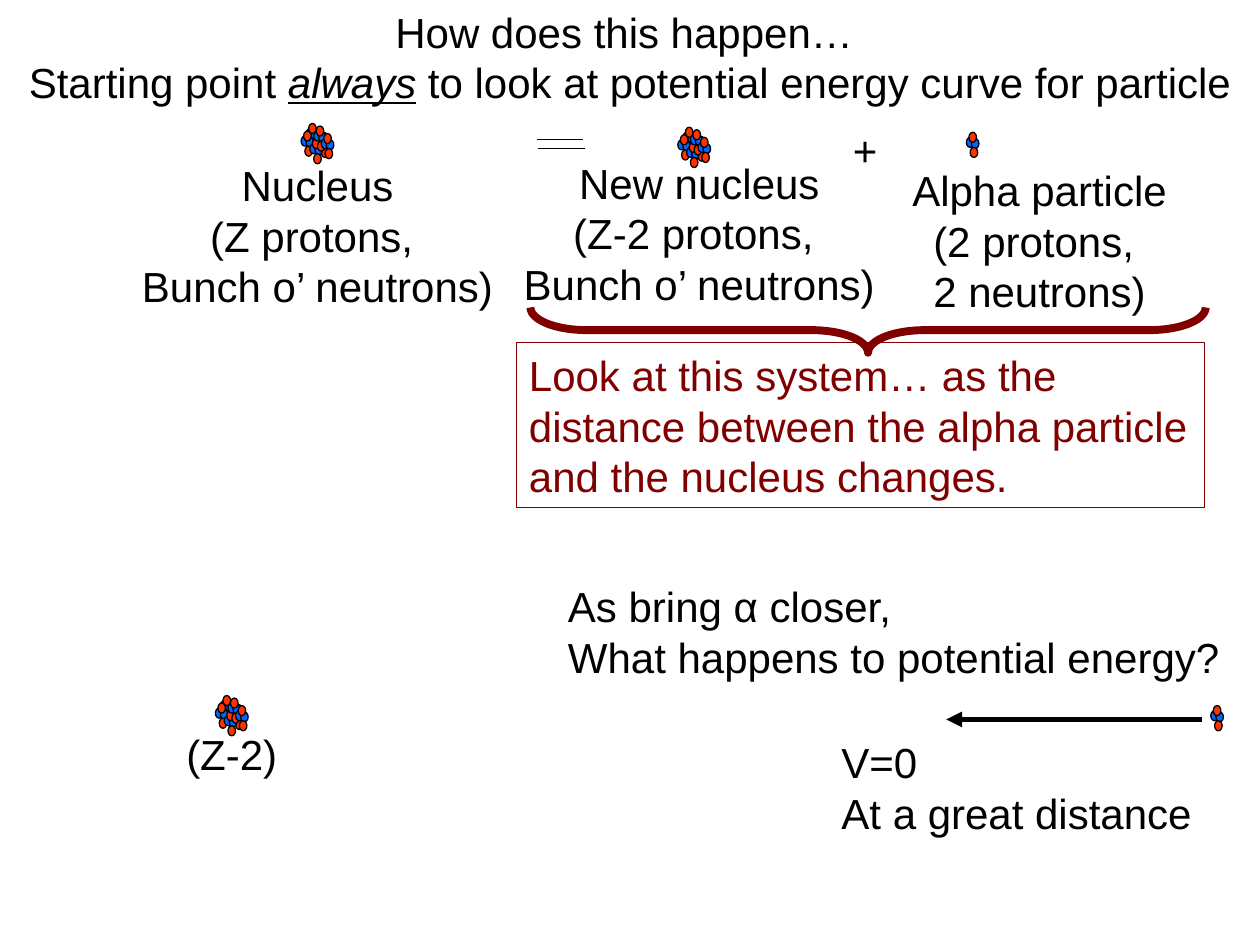
from lxml import etree
from pptx import Presentation
from pptx.dml.color import RGBColor
from pptx.enum.shapes import MSO_CONNECTOR, MSO_SHAPE
from pptx.enum.text import PP_ALIGN
from pptx.oxml.ns import qn
from pptx.util import Pt

PX = 9144
FONT = "Arial"
BLACK, MAROON, NEUTRON_BLUE, PROTON_RED = "000000", "800000", "0066FF", "FF3300"
LEFT, CENTER = PP_ALIGN.LEFT, PP_ALIGN.CENTER
ELLIPSE, RECTANGLE, BRACE = MSO_SHAPE.OVAL, MSO_SHAPE.RECTANGLE, MSO_SHAPE.LEFT_BRACE
STRAIGHT = MSO_CONNECTOR.STRAIGHT

NUCLEON_SIZE = (6, 8)
NUCLEONS = [(0, 4, NEUTRON_BLUE), (4, 5, NEUTRON_BLUE), (2, 0, PROTON_RED), (3, 12, PROTON_RED)]
ALPHAS_IN_NUCLEUS = [(4, 0), (0, 6), (13, 7), (7, 12), (10, 2), (16, 8)]


def emu(*lengths):
    return [round(length * PX) for length in lengths]


def color(hex_code):
    return RGBColor.from_string(hex_code)


def write(frame, lines, hex_code=BLACK, align=LEFT, wrap=True):
    frame.word_wrap = wrap
    frame.text = "\n".join(lines)
    for paragraph in frame.paragraphs:
        paragraph.alignment = align
        for run in paragraph.runs:
            style(run, hex_code)


def style(run, hex_code):
    run.font.name = FONT
    run.font.size = Pt(24)
    run.font.color.rgb = color(hex_code)


def add_label(shapes, box, lines, align=LEFT, wrap=False):
    label = shapes.add_textbox(*emu(*box))
    write(label.text_frame, lines, align=align, wrap=wrap)
    return label.text_frame


def add_outlined(shapes, preset, box, line_color, line_width, fill=None):
    outlined = shapes.add_shape(preset, *emu(*box))
    outlined.shadow.inherit = False
    outlined.line.color.rgb = color(line_color)
    outlined.line.width = Pt(line_width)
    if fill:
        outlined.fill.solid()
        outlined.fill.fore_color.rgb = color(fill)
    else:
        outlined.fill.background()
    return outlined


def add_line(shapes, start, end, width):
    connector = shapes.add_connector(STRAIGHT, *emu(*start, *end))
    connector.line.color.rgb = color(BLACK)
    connector.line.width = Pt(width)
    etree.SubElement(connector.element.spPr, qn("a:effectLst"))
    return connector


def add_alpha(shapes, left, top):
    alpha = shapes.add_group_shape()
    for dx, dy, fill in NUCLEONS:
        box = (left + dx, top + dy, *NUCLEON_SIZE)
        add_outlined(alpha.shapes, ELLIPSE, box, BLACK, 0.75, fill)


def add_nucleus(shapes, left, top):
    nucleus = shapes.add_group_shape()
    for dx, dy in ALPHAS_IN_NUCLEUS:
        add_alpha(nucleus.shapes, left + dx, top + dy)


def add_heading(shapes, box):
    frame = add_label(shapes, box, ["How does this happen… ", "Starting point "], CENTER, wrap=True)
    starting_point = frame.paragraphs[1]
    for words, stressed in [("always", True),
                            (" to look at potential energy curve for particle", False)]:
        run = starting_point.add_run()
        run.text = words
        style(run, BLACK)
        run.font.italic = stressed
        run.font.underline = stressed


def add_decay_equation(shapes, left, top):
    add_label(shapes, (left + 2, top + 32, 300, 130),
              ["Nucleus", "(Z protons, ", "Bunch o’ neutrons)"], CENTER)
    add_nucleus(shapes, left + 139, top + 8)
    for dx, dy in [(326, 21), (327, 28)]:
        add_line(shapes, (left + dx, top + dy), (left + dx + 37, top + dy), 0.75)
    add_label(shapes, (left + 305, top + 30, 300, 130),
              ["New nucleus", "(Z-2 protons, ", "Bunch o’ neutrons)"], CENTER)
    add_nucleus(shapes, left + 438, top + 11)
    add_label(shapes, (left + 567, top + 4, 40, 50), ["+"])
    add_label(shapes, (left + 614, top + 36, 222, 130),
              ["Alpha particle", "(2 protons, ", "2 neutrons)"], CENTER)
    add_alpha(shapes, left + 667, top + 15)


def add_system_note(shapes, left, top):
    span, depth = 536, 36
    turn = (span - depth) / 2
    brace = add_outlined(shapes, BRACE, (left + 11 + turn, top - turn, depth, span), MAROON, 4.5)
    brace.rotation = 270
    brace.adjustments[0] = 1.25
    brace.adjustments[1] = 0.5
    note = add_outlined(shapes, RECTANGLE, (left, top + 28, 546, 131), MAROON, 0.75)
    write(note.text_frame, ["Look at this system… as the distance between the alpha particle "
                            "and the nucleus changes."], MAROON)


def add_approach(shapes, left, top):
    add_nucleus(shapes, left + 41, top + 102)
    add_label(shapes, (left + 8, top + 123, 92, 50), ["(Z-2)"])
    add_alpha(shapes, left + 831, top + 110)
    add_label(shapes, (left + 528, top + 130, 342, 90), ["V=0", "At a great distance"], wrap=True)
    arrow = add_line(shapes, (left + 824, top + 121), (left + 621, top + 121), 3)
    etree.SubElement(arrow.line._get_or_add_ln(), qn("a:tailEnd"), type="triangle")
    add_label(shapes, (left + 311, top + 6, 537, 90),
              ["As bring α closer,", "What happens to potential energy?"])


def main():
    deck = Presentation()
    deck.slide_width, deck.slide_height = emu(1000, 750)
    shapes = deck.slides.add_slide(deck.slide_layouts[6]).shapes
    add_heading(shapes, (0, 0, 1000, 90))
    add_decay_equation(shapes, 100, 90)
    add_system_note(shapes, 410, 244)
    add_approach(shapes, 130, 450)
    deck.save("out.pptx")


if __name__ == "__main__":
    main()
